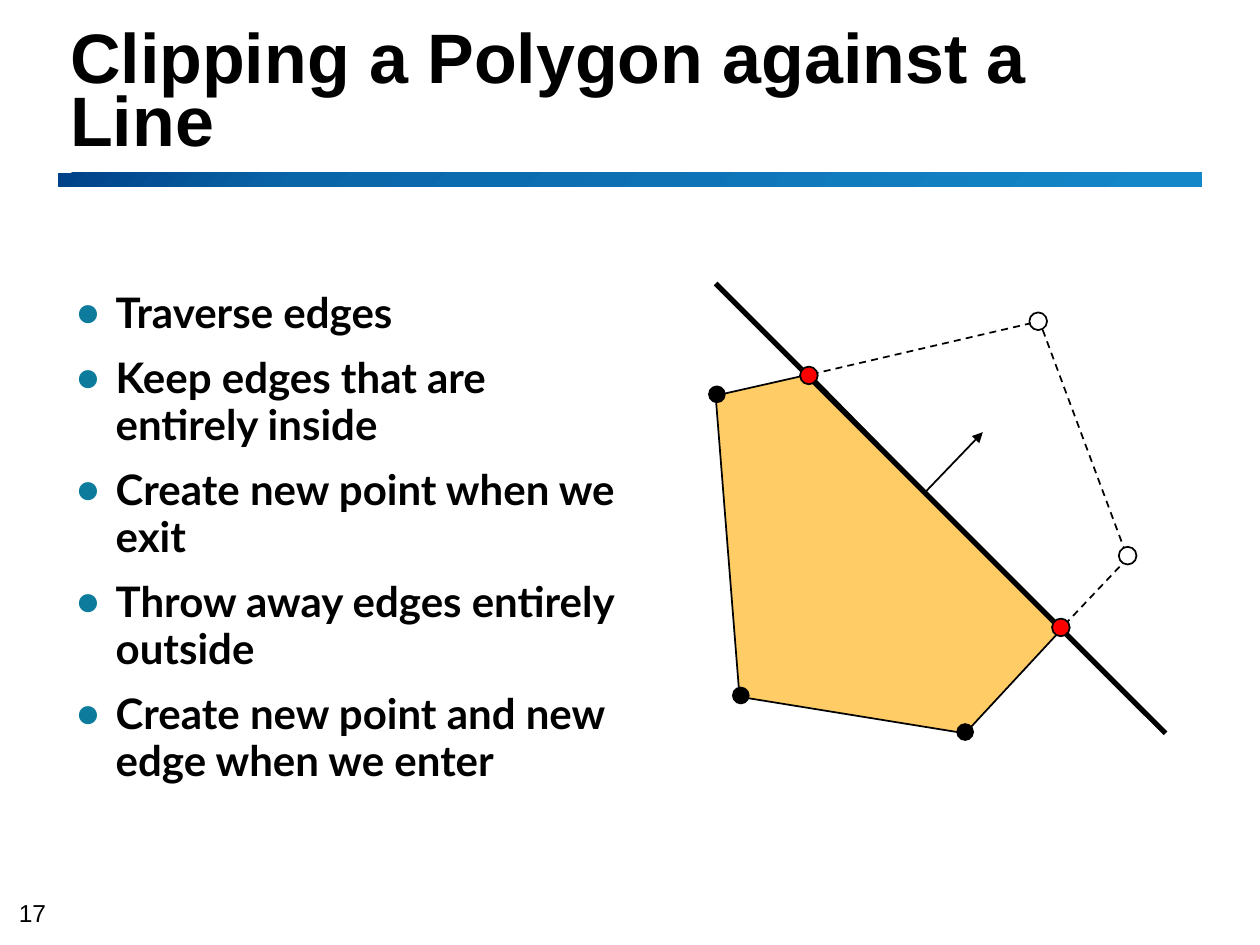
from copy import deepcopy

from pptx import Presentation
from pptx.dml.color import RGBColor
from pptx.enum.dml import MSO_LINE
from pptx.enum.shapes import MSO_CONNECTOR, MSO_SHAPE
from pptx.enum.text import MSO_ANCHOR
from pptx.oxml.ns import qn
from pptx.util import Inches, Pt
from lxml.etree import SubElement


def color(value):
    return RGBColor.from_string(value)


def add_text(box, lines, font="Arial", size=14, bold=False, anchor=MSO_ANCHOR.TOP,
             insets=(0, 0, 0, 0), spacing=None, after=0, bullet=None, wrap=True):
    left, top, width, height = map(Inches, box)
    frame = slide.shapes.add_textbox(left, top, width, height).text_frame
    frame.word_wrap = wrap
    frame.vertical_anchor = anchor
    (frame.margin_left, frame.margin_top,
     frame.margin_right, frame.margin_bottom) = map(Inches, insets)
    for index, line in enumerate(lines):
        paragraph = frame.add_paragraph() if index else frame.paragraphs[0]
        run = paragraph.add_run()
        run.text = line
        if spacing:
            paragraph.line_spacing = Pt(spacing)
        paragraph.space_after = Pt(after)
        if bullet:
            props = paragraph._p.get_or_add_pPr()
            props.set("marL", str(Inches(0.32)))
            props.set("indent", str(-Inches(0.32)))
            bullet_color = SubElement(props, qn("a:buClr"))
            SubElement(bullet_color, qn("a:srgbClr"), val=bullet)
            SubElement(props, qn("a:buFont"), typeface="Arial")
            SubElement(props, qn("a:buChar"), char="●")
        run.font.name = font
        run.font.size = Pt(size)
        run.font.bold = bold
        run.font.color.rgb = color("000000")


prs = Presentation()
prs.slide_width, prs.slide_height = Inches(10), Inches(7.5)
slide = prs.slides.add_slide(prs.slide_layouts[6])

add_text((0.15, 7.13, 0.34, 0.23), ["17"], anchor=MSO_ANCHOR.BOTTOM, wrap=False)

rule = slide.shapes.add_shape(
    MSO_SHAPE.RECTANGLE, Inches(0.46), Inches(1.37), Inches(9.08), Inches(0.11))
rule.shadow.inherit = False
rule.line.fill.background()
rule.fill.gradient()
rule.fill.gradient_angle = 315
stop_list = rule._element.spPr.find(qn("a:gradFill")).find(qn("a:gsLst"))
stop_list.insert(1, deepcopy(stop_list[0]))
gradient = [(0, "004187"), (0.21, "0A64A8"), (0.96, "1487C8")]
for stop, (position, shade) in zip(rule.fill.gradient_stops, gradient):
    stop.position = position
    stop.color.rgb = color(shade)

add_text((0.46, 0.33, 9.06, 0.99), ["Clipping a Polygon against a Line"], size=40,
         bold=True, anchor=MSO_ANCHOR.BOTTOM, insets=(0.1, 0.05, 0.1, 0.05), spacing=36)

steps = [
    "Traverse edges",
    "Keep edges that are entirely inside",
    "Create new point when we exit",
    "Throw away edges entirely outside",
    "Create new point and new edge when we enter",
]
add_text((0.5, 2.17, 4.67, 4.83), steps, font="Lato", size=24, bold=True,
         insets=(0.1, 0.13, 0.2, 0.05), spacing=27, after=10, bullet="0C7B9C")

outside = [(6.4, 2.98), (8.42, 4.99), (8.95, 4.43), (8.25, 2.55)]
inside = [(6.43, 2.97), (5.68, 3.14), (5.87, 5.53), (7.66, 5.82), (8.42, 5)]
for corners, fill, dash in [(outside, None, MSO_LINE.DASH), (inside, "FFCC66", None)]:
    points = [(Inches(x), Inches(y)) for x, y in corners]
    builder = slide.shapes.build_freeform(*points[0])
    builder.add_line_segments(points[1:], close=True)
    polygon = builder.convert_to_shape()
    polygon.shadow.inherit = False
    if fill:
        polygon.fill.solid()
        polygon.fill.fore_color.rgb = color(fill)
    else:
        polygon.fill.background()
    polygon.line.color.rgb = color("000000")
    polygon.line.width = Pt(1)
    polygon.line.dash_style = dash

clip_line = ((5.68, 2.25), (9.25, 5.82), 3, False)
normal = ((7.33, 3.92), (7.8, 3.43), 1, True)
for start, end, weight, arrow in (clip_line, normal):
    segment = slide.shapes.add_connector(
        MSO_CONNECTOR.STRAIGHT, *map(Inches, start + end))
    segment.line.color.rgb = color("000000")
    segment.line.width = Pt(weight)
    if arrow:
        SubElement(segment.line._get_or_add_ln(), qn("a:tailEnd"), type="triangle")
    SubElement(segment._element.spPr, qn("a:effectLst"))

vertices = [
    ("000000", False, [(5.81, 5.45), (7.59, 5.74), (5.62, 3.06)]),
    ("FFFFFF", True, [(8.88, 4.34), (8.17, 2.48)]),
    ("FF0000", True, [(6.35, 2.91), (8.35, 4.91)]),
]
for fill, outlined, corners in vertices:
    for left, top in corners:
        vertex = slide.shapes.add_shape(
            MSO_SHAPE.OVAL, Inches(left), Inches(top), Inches(0.14), Inches(0.14))
        vertex.shadow.inherit = False
        vertex.fill.solid()
        vertex.fill.fore_color.rgb = color(fill)
        if outlined:
            vertex.line.color.rgb = color("000000")
            vertex.line.width = Pt(1)
        else:
            vertex.line.fill.background()

prs.save("out.pptx")
